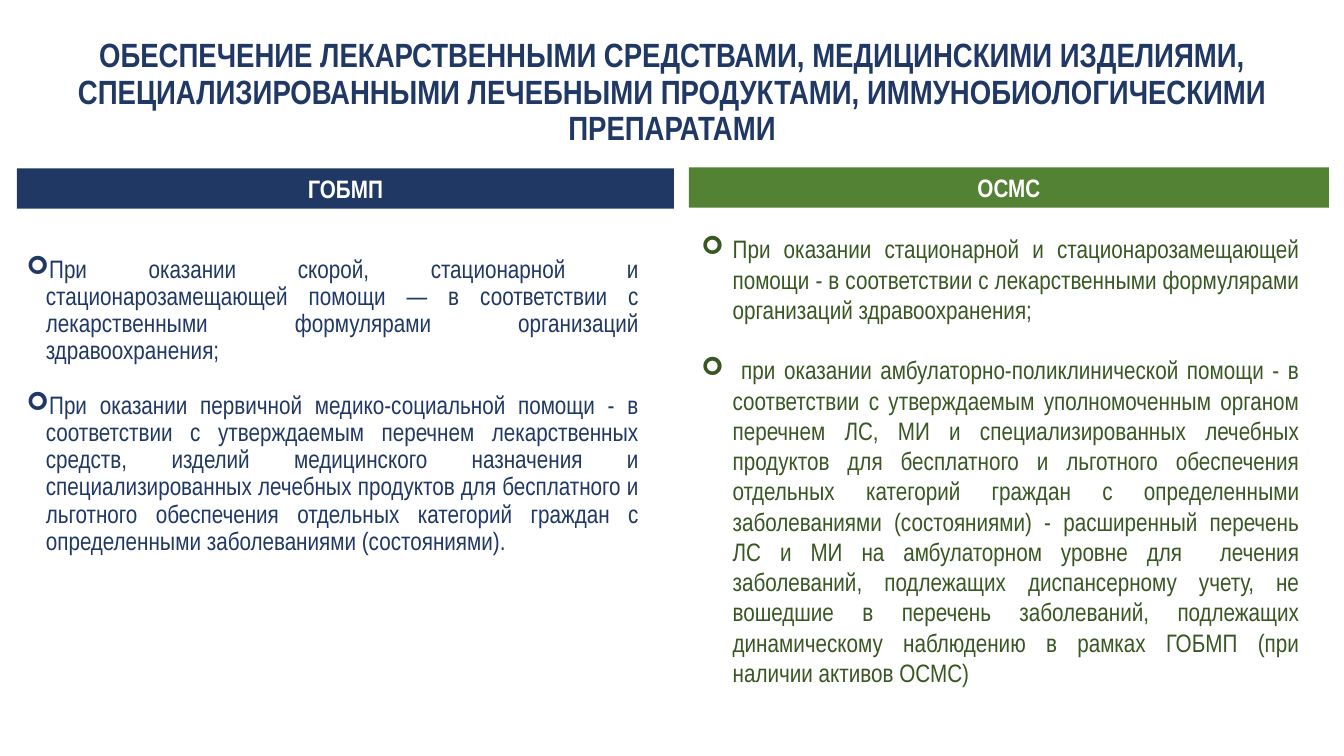
from dataclasses import dataclass
from lxml.etree import SubElement
from pptx import Presentation
from pptx.dml.color import RGBColor as Rgb
from pptx.enum.shapes import MSO_SHAPE as Kind
from pptx.enum.text import MSO_ANCHOR as Anchor, MSO_AUTO_SIZE as Fit, PP_ALIGN as Align
from pptx.oxml.ns import qn
from pptx.util import Inches, Pt

COLS, ROWS = 80, 45
WIDE, HIGH = Inches(13.33), Inches(7.5)


@dataclass(frozen=True)
class Theme:
    font: str = "Arial Narrow"
    navy: str = "203864"
    green: str = "548235"
    moss: str = "385723"
    white: str = "FFFFFF"
    head: int = 24
    text: int = 18


@dataclass(frozen=True)
class Box:
    col: float
    row: float
    cols: float
    rows: float


@dataclass(frozen=True)
class Panel:
    name: str
    bar: Box
    fill: str
    body: Box
    ink: str
    anchor: Anchor
    line: float
    gap: float
    dent: float
    items: tuple[str, ...]


THEME = Theme()
TITLE = (
    "ОБЕСПЕЧЕНИЕ ЛЕКАРСТВЕННЫМИ СРЕДСТВАМИ, МЕДИЦИНСКИМИ ИЗДЕЛИЯМИ, "
    "СПЕЦИАЛИЗИРОВАННЫМИ ЛЕЧЕБНЫМИ ПРОДУКТАМИ, ИММУНОБИОЛОГИЧЕСКИМИ ПРЕПАРАТАМИ"
)
PANELS = (
    Panel(
        "ГОБМП", Box(1, 10.02, 39.12, 2.4), THEME.navy,
        Box(1, 13.38, 37.62, 21.6), THEME.navy, Anchor.MIDDLE, 0.9, 19.4, 0.19,
        (
            "При оказании скорой, стационарной и стационарозамещающей помощи — "
            "в соответствии с лекарственными формулярами организаций здравоохранения;",
            "При оказании первичной медико-социальной помощи - в соответствии с "
            "утверждаемым перечнем лекарственных средств, изделий медицинского "
            "назначения и специализированных лечебных продуктов для бесплатного и "
            "льготного обеспечения отдельных категорий граждан с определенными "
            "заболеваниями (состояниями).",
        ),
    ),
    Panel(
        "ОСМС", Box(41, 9.96, 38.1, 2.4), THEME.green,
        Box(41.16, 13.62, 36.78, 29.7), THEME.moss, Anchor.TOP, 1.0, 21.6, 0.31,
        (
            "При оказании стационарной и стационарозамещающей помощи - в соответствии "
            "с лекарственными формулярами организаций здравоохранения;",
            " при оказании амбулаторно-поликлинической помощи - в соответствии с "
            "утверждаемым уполномоченным органом перечнем ЛС, МИ и специализированных "
            "лечебных продуктов для бесплатного и льготного обеспечения отдельных "
            "категорий граждан с определенными заболеваниями (состояниями) - "
            "расширенный перечень ЛС и МИ на амбулаторном уровне для  лечения "
            "заболеваний, подлежащих диспансерному учету, не вошедшие в перечень "
            "заболеваний, подлежащих динамическому наблюдению в рамках ГОБМП "
            "(при наличии активов ОСМС)",
        ),
    ),
)


def apply(item, **style) -> None:
    for name, value in style.items():
        setattr(item, name, value)


def place(box: Box) -> dict[str, int]:
    return {
        "left": round(WIDE * box.col / COLS),
        "top": round(HIGH * box.row / ROWS),
        "width": round(WIDE * box.cols / COLS),
        "height": round(HIGH * box.rows / ROWS),
    }


def frame(shape, anchor: Anchor):
    text = shape.text_frame
    apply(text, word_wrap=True, auto_size=Fit.NONE, vertical_anchor=anchor,
          margin_left=Inches(0.1), margin_right=Inches(0.1),
          margin_top=Inches(0.05), margin_bottom=Inches(0.05))
    return text


def write(para, text: str, ink: str, size: int, bold: bool, **style) -> None:
    apply(para, **style)
    run = para.add_run()
    run.text = text
    apply(run.font, name=THEME.font, size=Pt(size), bold=bold)
    run.font.color.rgb = Rgb.from_string(ink)


def mark(para, dent: float) -> None:
    prop = para._p.get_or_add_pPr()
    prop.set("marL", str(Inches(dent)))
    prop.set("indent", str(-Inches(dent)))
    SubElement(prop, qn("a:buFont")).set("typeface", "Wingdings")
    SubElement(prop, qn("a:buChar")).set("char", "➢")


def head(slide) -> None:
    title = slide.shapes.title
    apply(title, **place(Box(0, 4.14, COLS, 2.82)))
    para = frame(title, Anchor.MIDDLE).paragraphs[0]
    write(para, TITLE, THEME.navy, THEME.head, True,
          alignment=Align.CENTER, line_spacing=0.9, space_before=Pt(0))


def draw(slide, panel: Panel) -> None:
    bar = slide.shapes.add_shape(Kind.RECTANGLE, **place(panel.bar))
    bar.shadow.inherit = False
    bar.fill.solid()
    bar.fill.fore_color.rgb = Rgb.from_string(panel.fill)
    bar.line.fill.background()
    write(frame(bar, Anchor.MIDDLE).paragraphs[0], panel.name, THEME.white,
          THEME.text, True, alignment=Align.CENTER)
    text = frame(slide.shapes.add_textbox(**place(panel.body)), panel.anchor)
    for rank, item in enumerate(panel.items):
        para = text.add_paragraph() if rank else text.paragraphs[0]
        write(para, item, panel.ink, THEME.text, False, alignment=Align.JUSTIFY,
              line_spacing=panel.line, space_before=Pt(panel.gap if rank else 0))
        mark(para, panel.dent)


def main() -> None:
    deck = Presentation()
    apply(deck, slide_width=WIDE, slide_height=HIGH)
    slide = deck.slides.add_slide(deck.slide_layouts.get_by_name("Title Only"))
    head(slide)
    for panel in PANELS:
        draw(slide, panel)
    deck.save("out.pptx")


if __name__ == "__main__":
    main()
